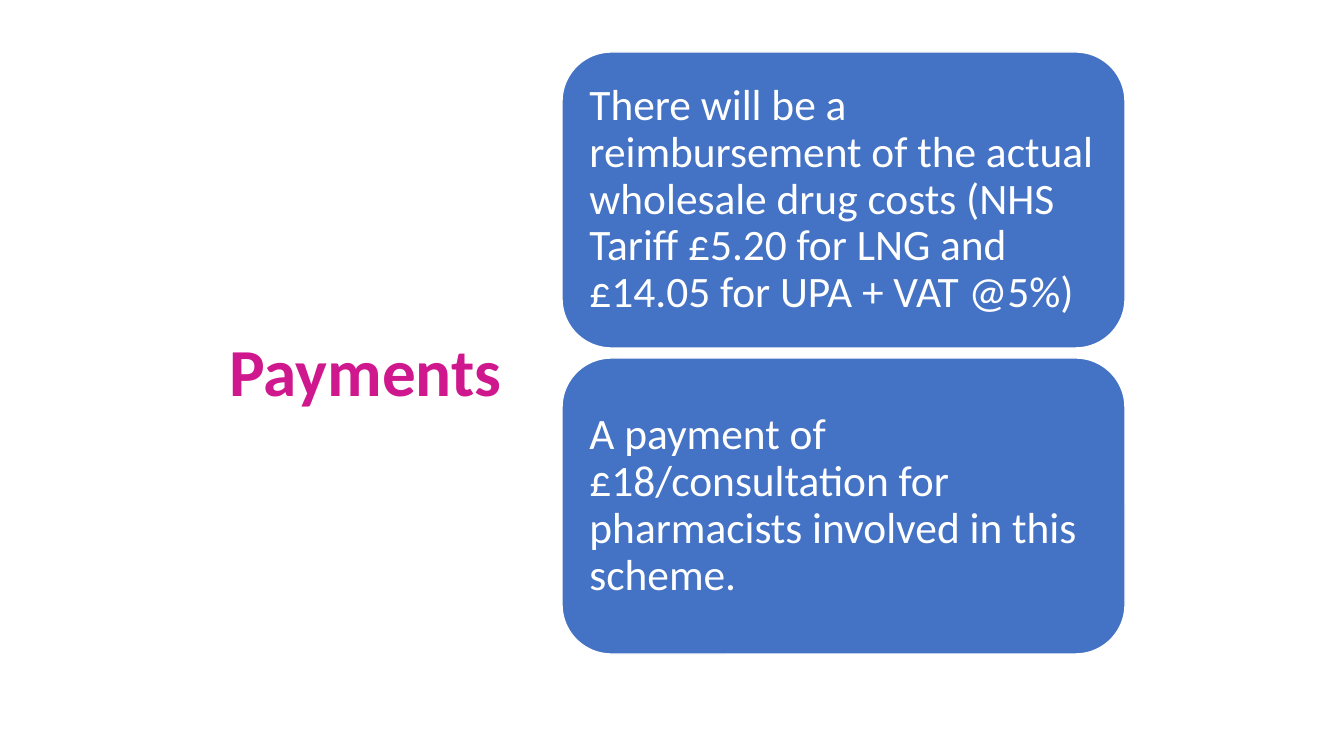
from dataclasses import dataclass

from pptx import Presentation
from pptx.dml.color import RGBColor
from pptx.enum.shapes import MSO_SHAPE
from pptx.enum.text import MSO_ANCHOR, PP_ALIGN
from pptx.util import Emu, Pt

ROUNDED = MSO_SHAPE.ROUNDED_RECTANGLE
BOTTOM, MIDDLE = MSO_ANCHOR.BOTTOM, MSO_ANCHOR.MIDDLE
LEFT, CENTER = PP_ALIGN.LEFT, PP_ALIGN.CENTER
EMU_PER_PX = 914400 / 100.8


@dataclass(frozen=True)
class Theme:
    font: str = "Calibri"
    title_size: int = 48
    card_size: int = 31
    line_spacing: float = 0.9
    pink: RGBColor = RGBColor(0xCF, 0x18, 0x8D)
    blue: RGBColor = RGBColor(0x44, 0x72, 0xC4)
    white: RGBColor = RGBColor(0xFF, 0xFF, 0xFF)


def px(length):
    return Emu(round(length * EMU_PER_PX))


class SlideBuilder:
    def __init__(self, page, theme):
        self.page = page
        self.theme = theme

    def set_text(self, shape, text, size, color, align, anchor, bold=False):
        frame = shape.text_frame
        frame.word_wrap = True
        frame.vertical_anchor = anchor
        para = frame.paragraphs[0]
        para.text = text
        para.alignment = align
        para.line_spacing = self.theme.line_spacing
        para.font.name = self.theme.font
        para.font.size = Pt(size)
        para.font.bold = bold
        para.font.color.rgb = color
        return frame

    def title(self, text, left, top, width, height):
        box = self.page.shapes.add_textbox(px(left), px(top), px(width), px(height))
        self.set_text(box, text, self.theme.title_size, self.theme.pink, CENTER, BOTTOM, bold=True)

    def card(self, text, left, top, width, height, inset):
        card = self.page.shapes.add_shape(ROUNDED, px(left), px(top), px(width), px(height))
        card.shadow.inherit = False
        card.fill.solid()
        card.fill.fore_color.rgb = self.theme.blue
        card.line.color.rgb = self.theme.white
        card.line.width = Pt(1)
        frame = self.set_text(card, text, self.theme.card_size, self.theme.white, LEFT, MIDDLE)
        frame.margin_left = frame.margin_right = px(inset)
        frame.margin_top = frame.margin_bottom = px(inset)


PAYMENT_TERMS = [
    "There will be a reimbursement of the actual wholesale drug costs "
    "(NHS Tariff £5.20 for LNG and £14.05 for UPA + VAT @5%)",
    "A payment of £18/consultation for pharmacists involved in this scheme.",
]
CARD_TOP, CARD_HEIGHT, CARD_GAP = 52, 296, 10


def main():
    deck = Presentation()
    deck.slide_width, deck.slide_height = px(1344), px(756)
    page = deck.slides.add_slide(deck.slide_layouts[6])
    builder = SlideBuilder(page, Theme())
    builder.title("Payments ", 207, 288, 332, 128)
    for index, term in enumerate(PAYMENT_TERMS):
        top = CARD_TOP + index * (CARD_HEIGHT + CARD_GAP)
        builder.card(term, 562, top, 563, CARD_HEIGHT, inset=13)
    deck.save("out.pptx")


if __name__ == "__main__":
    main()
